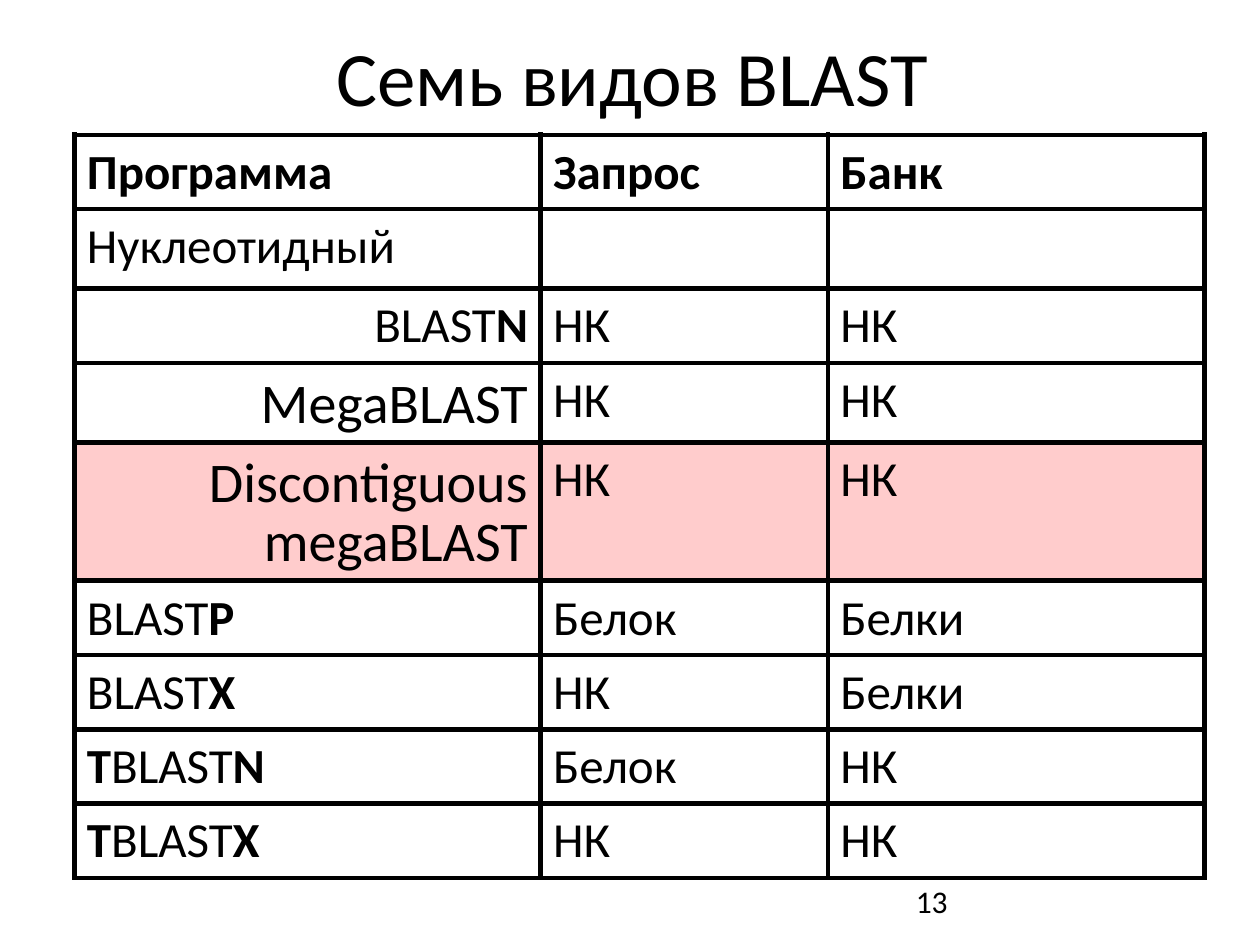
import pptx
import pptx.dml.color
import pptx.enum.text
import pptx.oxml
import pptx.oxml.ns
import pptx.util

Inches = pptx.util.Inches
Pt = pptx.util.Pt
ALIGN = pptx.enum.text.PP_ALIGN
MIDDLE = pptx.enum.text.MSO_ANCHOR.MIDDLE
FONT = "Calibri"
COLORS = {"ink": "000000", "mark": "FFCCCC"}

# Asterisks enclose bold text.
ROWS = [
    ("*Программа*", "*Запрос*", "*Банк*"),
    ("Нуклеотидный", "", ""),
    ("BLAST*N*", "НК", "НК"),
    ("MegaBLAST", "НК", "НК"),
    ("Discontiguous megaBLAST", "НК", "НК"),
    ("BLAST*P*", "Белок", "Белки"),
    ("BLAST*X*", "НК", "Белки"),
    ("*T*BLAST*N*", "Белок", "НК"),
    ("*T*BLAST*X*", "НК", "НК"),
]
WIDTHS = [3.7, 2.28, 2.99]
HEIGHT = 0.59
TALL = {1: 0.63, 3: 0.63, 4: 1.1}
NESTED = (2, 3, 4)
LARGE = (3, 4)
MARKED = 4


def color(name):
    return pptx.dml.color.RGBColor.from_string(COLORS[name])


def add_runs(para, text, size):
    """Add runs, with the parts between asterisks in bold."""
    for i, part in enumerate(text.split("*")):
        if part:
            run = para.add_run()
            run.text = part
            run.font.name = FONT
            run.font.size = Pt(size)
            run.font.bold = i % 2 == 1
            run.font.color.rgb = color("ink")


def set_borders(cell, width=3):
    props = cell._tc.get_or_add_tcPr()
    for side in ("lnL", "lnR", "lnT", "lnB"):
        props.append(pptx.oxml.parse_xml(
            f'<a:{side} {pptx.oxml.ns.nsdecls("a")} w="{Pt(width)}">'
            f'<a:solidFill><a:srgbClr val="{COLORS["ink"]}"/></a:solidFill>'
            f'</a:{side}>'))


def fill_cell(cell, text, size, align, marked):
    set_borders(cell)
    if marked:
        cell.fill.solid()
        cell.fill.fore_color.rgb = color("mark")
    else:
        cell.fill.background()
    cell.margin_left = cell.margin_right = cell.margin_top = Inches(0.1)
    cell.margin_bottom = Inches(0.05)
    para = cell.text_frame.paragraphs[0]
    para.alignment = align
    para.line_spacing = 0.87
    add_runs(para, text, size)


def add_title(slide, text):
    title = slide.shapes.title
    title.left, title.top = Inches(1.69), Inches(0.13)
    title.width, title.height = Inches(6.66), Inches(0.94)
    title.text_frame.vertical_anchor = MIDDLE
    para = title.text_frame.paragraphs[0]
    para.alignment = ALIGN.CENTER
    add_runs(para, text, 44)


def add_grid(slide):
    heights = [TALL.get(r, HEIGHT) for r in range(len(ROWS))]
    table = slide.shapes.add_table(
        len(ROWS), len(WIDTHS), Inches(0.59), Inches(1.07),
        Inches(sum(WIDTHS)), Inches(sum(heights))).table
    table.first_row = table.horz_banding = False
    for col, width in zip(table.columns, WIDTHS):
        col.width = Inches(width)
    for r, texts in enumerate(ROWS):
        table.rows[r].height = Inches(heights[r])
        for c, text in enumerate(texts):
            size = 32 if c == 0 and r in LARGE else 28
            align = ALIGN.RIGHT if c == 0 and r in NESTED else ALIGN.LEFT
            fill_cell(table.cell(r, c), text, size, align, r == MARKED)


def add_number(slide, text):
    box = slide.shapes.add_textbox(
        Inches(7.17), Inches(6.95), Inches(2.33), Inches(0.4))
    frame = box.text_frame
    frame.word_wrap = True
    frame.vertical_anchor = MIDDLE
    add_runs(frame.paragraphs[0], text, 18)


def main():
    deck = pptx.Presentation()
    deck.slide_width, deck.slide_height = Inches(10), Inches(7.5)
    slide = deck.slides.add_slide(deck.slide_layouts[5])
    add_title(slide, "Семь видов BLAST")
    add_grid(slide)
    add_number(slide, "13")
    deck.save("out.pptx")


if __name__ == "__main__":
    main()
